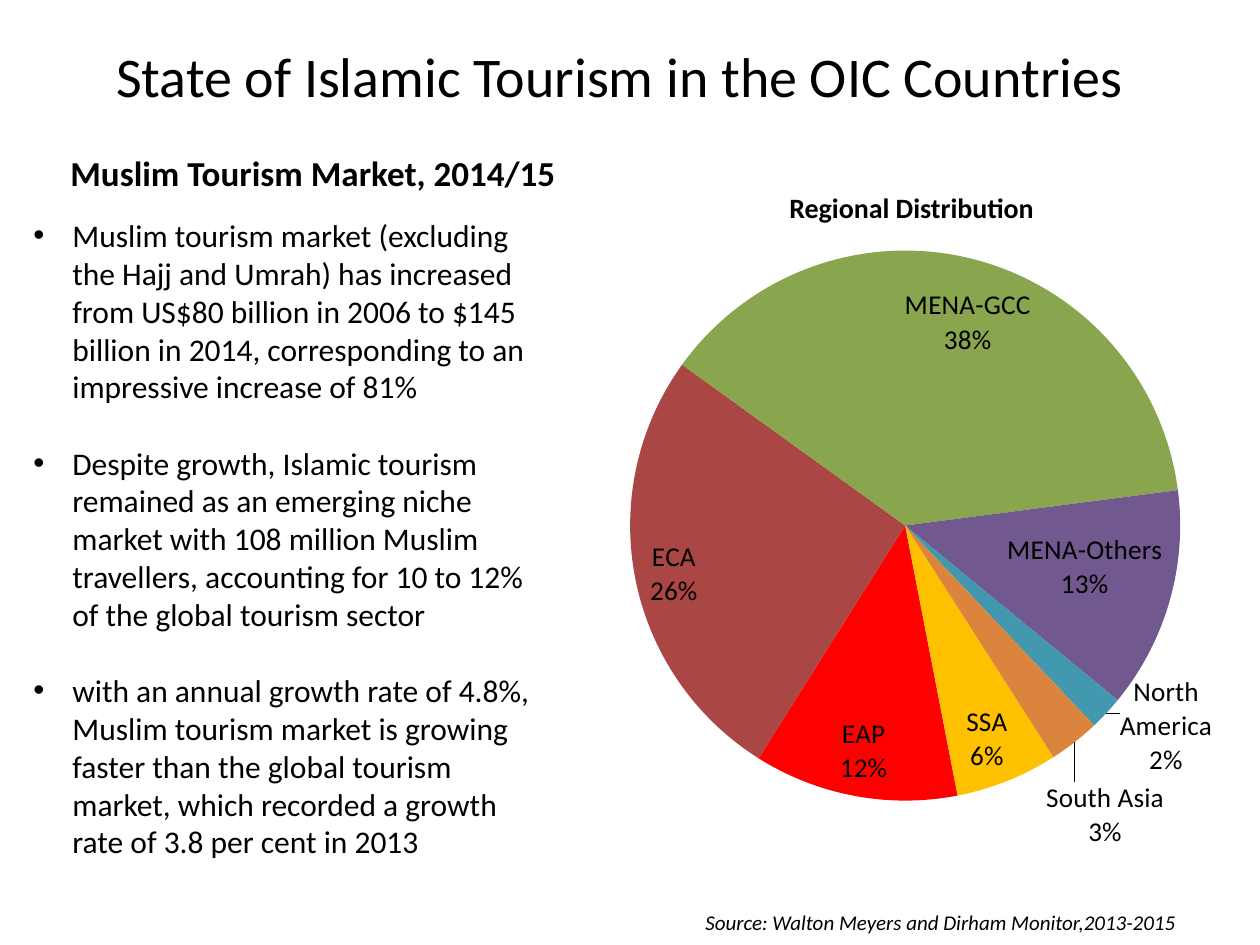
from lxml import etree
from pptx import Presentation
from pptx import util as u
from pptx.chart.data import CategoryChartData
from pptx.dml.color import RGBColor
from pptx.enum import chart as charts, text
from pptx.oxml import parse_xml
from pptx.oxml.ns import nsdecls, qn

PX = 914400 / 126
FONT = "Calibri"
BLACK = "000000"

TITLE = "State of Islamic Tourism in the OIC Countries"
HEADING = "Muslim Tourism Market, 2014/15"
BULLETS = [
    "Muslim tourism market (excluding the Hajj and Umrah) has increased from "
    "US$80 billion in 2006 to $145 billion in 2014, corresponding to an "
    "impressive increase of 81%",
    "Despite growth, Islamic tourism remained as an emerging niche market with "
    "108 million Muslim travellers, accounting for 10 to 12% of the global "
    "tourism sector",
    "with an annual growth rate of 4.8%, Muslim tourism market is growing faster "
    "than the global tourism market, which recorded a growth rate of 3.8 per "
    "cent in 2013",
]
CHART_TITLE = "Regional Distribution"
SOURCE = "Source: Walton Meyers and Dirham Monitor,2013-2015"
REGIONS = [  # name, share in percent, slice colour
    ("EAP", 12, "FF0000"),
    ("ECA", 26, "AA4643"),
    ("MENA-GCC", 38, "89A54E"),
    ("MENA-Others", 13, "71588F"),
    ("North America", 2, "4198AF"),
    ("South Asia", 3, "DB843D"),
    ("SSA", 6, "FFC000"),
]
FIRST_ANGLE = 169
PLOT_AREA = {"x": 0.13, "y": 0.03, "w": 0.68, "h": 0.97}
SHIFTED_LABEL = "North America"
LABEL_SHIFT = {"x": 0.01, "y": -0.06}


def px(*lengths):
    return [u.Emu(round(length * PX)) for length in lengths]


def color(value):
    return RGBColor.from_string(value)


def style(font, size, bold=False, italic=False):
    font.name, font.size = FONT, u.Pt(size)
    font.bold, font.italic = bold, italic
    font.color.rgb = color(BLACK)


def add_span(para, words, size, **looks):
    span = para.add_run()
    span.text = words
    style(span.font, size, **looks)


def add_box(page, place, wrap=True):
    frame = page.shapes.add_textbox(*px(*place)).text_frame
    frame.word_wrap = wrap
    return frame


def add_bullet(para, indent):
    props = para._p.get_or_add_pPr()
    props.set("marL", str(indent))
    props.set("indent", str(-indent))
    etree.SubElement(props, qn("a:buFont"), typeface="Arial")
    etree.SubElement(props, qn("a:buChar"), char="•")


def manual_layout(sizes, inner=False):
    target = '<c:layoutTarget val="inner"/>' if inner else ""
    modes = '<c:xMode val="edge"/><c:yMode val="edge"/>' if inner else ""
    values = "".join(f'<c:{key} val="{value}"/>' for key, value in sizes.items())
    return parse_xml(f"<c:layout {nsdecls('c')}><c:manualLayout>{target}{modes}"
                     f"{values}</c:manualLayout></c:layout>")


def show_name_and_percent(labels):
    """Show category and percentage on two lines, for one label or a series."""
    for tag, shown in (("showVal", 0), ("showCatName", 1), ("showPercent", 1)):
        labels.find(qn(f"c:{tag}")).set("val", str(shown))
    separator = parse_xml(f"<c:separator {nsdecls('c')}>\n</c:separator>")
    flags = [item for item in labels if item.tag in
             (qn("c:showPercent"), qn("c:showBubbleSize"))]
    flags[-1].addnext(separator)


def add_pie(page, place):
    names = [name for name, _, _ in REGIONS]
    data = CategoryChartData()
    data.categories = names
    data.add_series("Series 1", [share for _, share, _ in REGIONS])
    chart = page.shapes.add_chart(charts.XL_CHART_TYPE.PIE, *px(*place), data).chart
    chart.has_legend = chart.has_title = False
    style(chart.font, 15.5)

    plot = chart.plots[0]
    plot.vary_by_categories = True
    series = plot.series[0]
    for index, (_, _, fill) in enumerate(REGIONS):
        slice_format = series.points[index].format
        slice_format.fill.solid()
        slice_format.fill.fore_color.rgb = color(fill)
        slice_format.line.fill.background()

    best_fit = charts.XL_LABEL_POSITION.BEST_FIT
    labels = series.data_labels
    labels.position = best_fit
    show_name_and_percent(labels._element)
    shifted = names.index(SHIFTED_LABEL)
    series.points[shifted].data_label.position = best_fit
    label = labels._element.find(qn("c:dLbl"))
    show_name_and_percent(label)
    label.find(qn("c:idx")).addnext(manual_layout(LABEL_SHIFT))

    pie = chart.element.find(".//" + qn("c:pieChart"))
    for old in pie.findall(qn("c:firstSliceAng")):
        pie.remove(old)
    etree.SubElement(pie, qn("c:firstSliceAng"), val=str(FIRST_ANGLE))
    area = pie.getparent()
    for old in area.findall(qn("c:layout")):
        area.remove(old)
    area.insert(0, manual_layout(PLOT_AREA, inner=True))


def main():
    deck = Presentation()
    deck.slide_width, deck.slide_height = px(1260, 945)
    page = deck.slides.add_slide(deck.slide_layouts[5])

    title = page.shapes.title
    title.left, title.top, title.width, title.height = px(53, 0, 1134, 151)
    title.text_frame.vertical_anchor = text.MSO_ANCHOR.MIDDLE
    para = title.text_frame.paragraphs[0]
    para.alignment = text.PP_ALIGN.CENTER
    add_span(para, TITLE, 32)

    add_pie(page, (525, 158, 809, 714))

    source = add_box(page, (693, 903, 543, 38))
    add_span(source.paragraphs[0], SOURCE, 12, italic=True)

    body = add_box(page, (21, 210, 525, 662))
    for index, words in enumerate(BULLETS):
        para = body.add_paragraph() if index else body.paragraphs[0]
        if index:
            para.space_before = u.Pt(22)
        add_bullet(para, px(39)[0])
        add_span(para, words, 18)

    chart_title = add_box(page, (777, 184, 273, 47), wrap=False)
    add_span(chart_title.paragraphs[0], CHART_TITLE, 16, bold=True)

    heading = add_box(page, (58, 145, 519, 55))
    add_span(heading.paragraphs[0], HEADING, 20, bold=True)

    deck.save("out.pptx")


if __name__ == "__main__":
    main()
